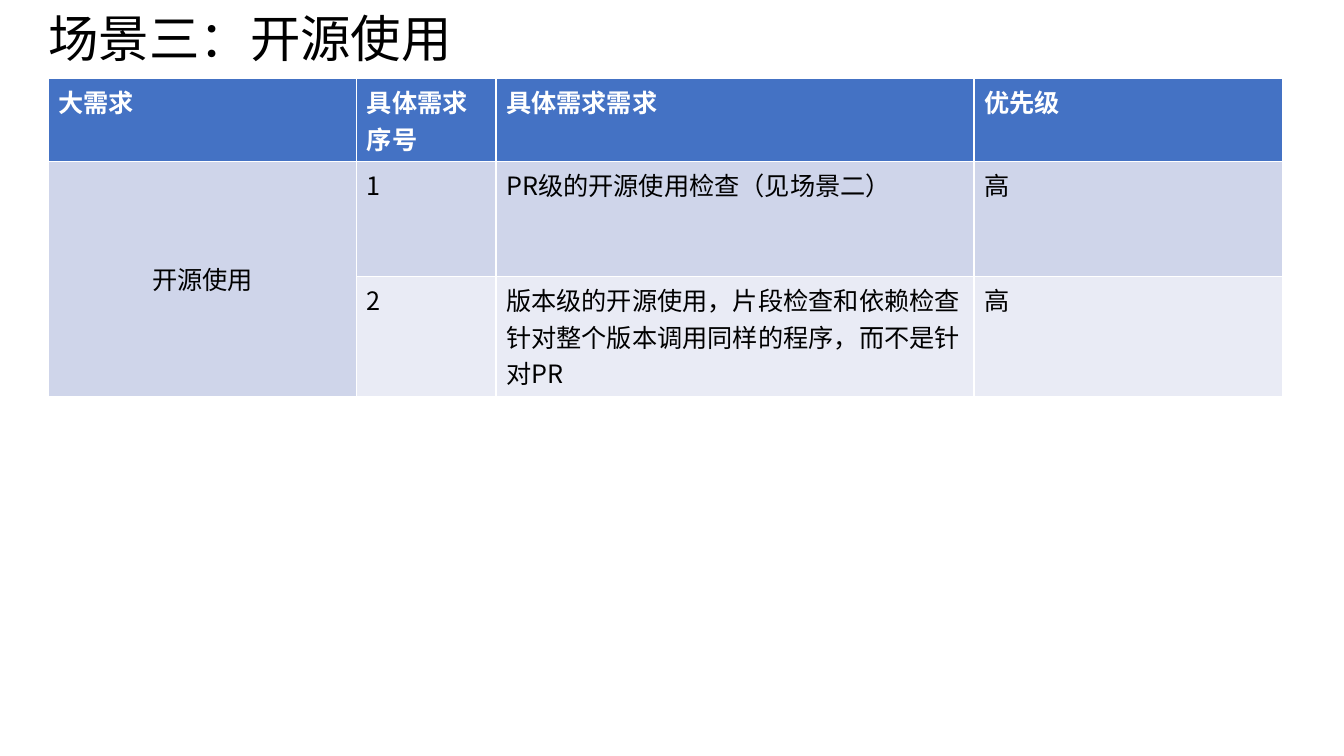
from pptx import Presentation
from pptx.dml.color import RGBColor
from pptx.enum import text as t
from pptx.oxml import ns, xmlchemy as xc
from pptx.util import Inches, Pt

FONT = "Noto Sans CJK SC"
BLACK = RGBColor(0x00, 0x00, 0x00)
WHITE = RGBColor(0xFF, 0xFF, 0xFF)
BLUE = RGBColor(0x44, 0x72, 0xC4)
BAND = RGBColor(0xCF, 0xD5, 0xEA)
PALE = RGBColor(0xE9, 0xEB, 0xF5)

TITLE = "场景三：开源使用"
ROWS = [
    ("大需求", "具体需求序号", "具体需求需求", "优先级"),
    ("开源使用", "1", "PR级的开源使用检查（见场景二）", "高"),
    ("", "2", "版本级的开源使用，片段检查和依赖检查针对整个版本调用同样的程序，而不是针对PR", "高"),
]
WIDTHS = (3.06, 1.38, 4.74, 3.06)
HEIGHTS = (0.57, 1.14, 1.14)
FILLS = (BLUE, BAND, PALE)
HEAD = {"name": FONT, "size": Pt(18), "bold": True}
BODY = {**HEAD, "bold": False}
BIG = {**BODY, "size": Pt(36)}


def write(frame, words, form, color):
    par = frame.paragraphs[0]
    run = par.add_run()
    run.text = words
    for key, value in form.items():
        setattr(run.font, key, value)
    run.font.color.rgb = color
    east = xc.OxmlElement("a:ea")
    east.set("typeface", FONT)
    run.font.fill
    run._r.find(ns.qn("a:rPr")).append(east)
    return par


def add_title(slide):
    title = slide.shapes.title
    place = {"left": 0.38, "top": 0.03, "width": 11.5, "height": 0.76}
    for key, value in place.items():
        setattr(title, key, Inches(value))
    frame = title.text_frame
    frame.auto_size = t.MSO_AUTO_SIZE.NONE
    frame.vertical_anchor = t.MSO_ANCHOR.MIDDLE
    par = write(frame, TITLE, BIG, BLACK)
    par.alignment = t.PP_ALIGN.LEFT
    par.line_spacing = 0.9


def add_grid(slide):
    table = slide.shapes.add_table(
        len(ROWS), len(WIDTHS), Inches(0.48), Inches(0.78),
        Inches(sum(WIDTHS)), Inches(sum(HEIGHTS))).table
    for col, width in zip(table.columns, WIDTHS):
        col.width = Inches(width)
    for row, height in zip(table.rows, HEIGHTS):
        row.height = Inches(height)
    for r, row in enumerate(ROWS):
        form, color = (BODY, BLACK) if r else (HEAD, WHITE)
        for c, words in enumerate(row):
            cell = table.cell(r, c)
            cell.fill.solid()
            cell.fill.fore_color.rgb = FILLS[r]
            if words:
                write(cell.text_frame, words, form, color)
    group = table.cell(1, 0)
    group.merge(table.cell(2, 0))
    group.vertical_anchor = t.MSO_ANCHOR.MIDDLE
    group.text_frame.paragraphs[0].alignment = t.PP_ALIGN.CENTER


def main():
    deck = Presentation()
    deck.slide_width, deck.slide_height = Inches(13.33), Inches(7.5)
    slide = deck.slides.add_slide(deck.slide_layouts[5])
    add_title(slide)
    add_grid(slide)
    deck.save("out.pptx")


if __name__ == "__main__":
    main()
